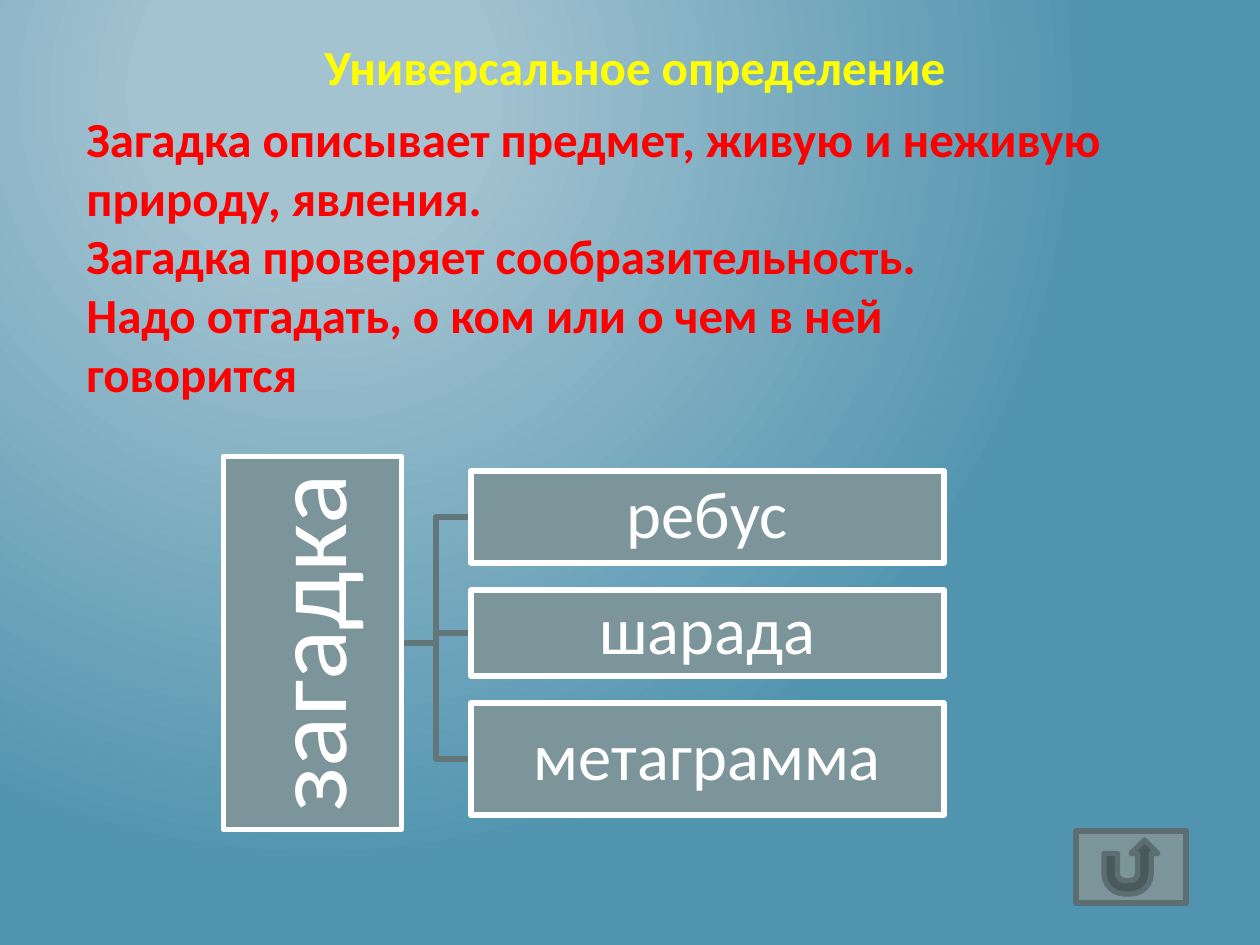
"""Builds a slide that defines a riddle and shows its three kinds as a tree."""
from lxml import etree
from pptx import Presentation
from pptx import util as u
from pptx.dml.color import RGBColor
from pptx.enum import shapes, text
from pptx.oxml.ns import qn

PX = 914400 / 126
SIZE = (1260, 945)
FONT = "Calibri"
GLOW = [(0.2, "A3C3D1"), (1, "5194AF")]
GLOW_FOCUS = {"l": 50, "t": 20, "r": 100, "b": 100}
FILL, WHITE, BRANCH, BUTTON_EDGE = "7C959A", "FFFFFF", "63777B", "5C6E72"
LINE_WIDTH = 3

HEADINGS = [
    {"place": (74, 102, 1042, 310), "color": "FF0000", "wrap": True, "lines": [
        "Загадка описывает предмет, живую и неживую природу, явления.",
        "Загадка проверяет сообразительность.",
        "Надо отгадать, о ком или о чем в ней говорится",
    ]},
    {"place": (312, 30, 656, 72), "color": "FFFF00", "wrap": False,
     "lines": ["Универсальное определение"]},
]
ROOT = {"label": "загадка", "place": (126, 554, 373, 178), "size": 60, "inset": 5}
KINDS = [("ребус", 92), ("шарада", 86), ("метаграмма", 112)]
KIND_LEFT, KIND_TOP, KIND_WIDTH, KIND_GAP = 471, 471, 473, 27
BUTTON = (1076, 831, 110, 72)


def px(*values):
    return [u.Emu(round(value * PX)) for value in values]


def color(value):
    return RGBColor.from_string(value)


def apply(target, values):
    for name, value in values.items():
        setattr(target, name, value)


def write(frame, lines, size, tint, bold=False, **paragraph_format):
    for index, line in enumerate(lines):
        para = frame.add_paragraph() if index else frame.paragraphs[0]
        apply(para, paragraph_format)
        span = para.add_run()
        span.text = line
        apply(span.font, {"name": FONT, "size": u.Pt(size), "bold": bold})
        span.font.color.rgb = color(tint)


def outline(shape, edge):
    shape.shadow.inherit = False
    shape.line.color.rgb = color(edge)
    shape.line.width = u.Pt(LINE_WIDTH)


def add_panel(page, kind, place, edge):
    panel = page.shapes.add_shape(kind, *px(*place))
    panel.fill.solid()
    panel.fill.fore_color.rgb = color(FILL)
    outline(panel, edge)
    return panel


def add_node(page, label, place, size, inset, rotation=0):
    node = add_panel(page, shapes.MSO_SHAPE.RECTANGLE, place, WHITE)
    node.rotation = rotation
    sides = ("margin_left", "margin_top", "margin_right", "margin_bottom")
    apply(node.text_frame, dict.fromkeys(sides, px(inset)[0]))
    apply(node.text_frame, {"word_wrap": True,
                            "vertical_anchor": text.MSO_ANCHOR.MIDDLE})
    write(node.text_frame, [label], size, WHITE,
          alignment=text.PP_ALIGN.CENTER, line_spacing=0.9)


def add_branch(page, start, end):
    middle = (start[0] + end[0]) / 2
    builder = page.shapes.build_freeform(*start, scale=PX)
    builder.add_line_segments([(middle, start[1]), (middle, end[1]), end], close=False)
    branch = builder.convert_to_shape()
    branch.fill.background()
    outline(branch, BRANCH)


def paint_background(page):
    fill = page.background.fill
    fill.gradient()
    for stop, (position, tint) in zip(fill.gradient_stops, GLOW):
        stop.position = position
        stop.color.rgb = color(tint)
    gradient = page.element.find(".//" + qn("a:gradFill"))
    linear = gradient.find(qn("a:lin"))
    radial = etree.Element(qn("a:path"), {"path": "circle"})
    etree.SubElement(radial, qn("a:fillToRect"),
                     {side: str(share * 1000) for side, share in GLOW_FOCUS.items()})
    gradient.replace(linear, radial)


def add_tree(page):
    left, top, length, thickness = ROOT["place"]
    trunk = (left + (length + thickness) / 2, top + thickness / 2)
    places, next_top = [], KIND_TOP
    for _, height in KINDS:
        places.append((KIND_LEFT, next_top, KIND_WIDTH, height))
        next_top += height + KIND_GAP
    for place in reversed(places):
        add_branch(page, trunk, (KIND_LEFT, place[1] + place[3] / 2))
    add_node(page, **ROOT, rotation=270)
    for (label, _), place in zip(KINDS, places):
        add_node(page, label, place, size=38, inset=4)


def main():
    deck = Presentation()
    deck.slide_width, deck.slide_height = px(*SIZE)
    page = deck.slides.add_slide(deck.slide_layouts[6])
    paint_background(page)
    add_tree(page)
    for heading in HEADINGS:
        box = page.shapes.add_textbox(*px(*heading["place"]))
        apply(box.text_frame, {"word_wrap": heading["wrap"],
                               "auto_size": text.MSO_AUTO_SIZE.SHAPE_TO_FIT_TEXT})
        write(box.text_frame, heading["lines"], 28, heading["color"], bold=True)
    add_panel(page, shapes.MSO_SHAPE.ACTION_BUTTON_RETURN, BUTTON, BUTTON_EDGE)
    deck.save("out.pptx")


if __name__ == "__main__":
    main()
